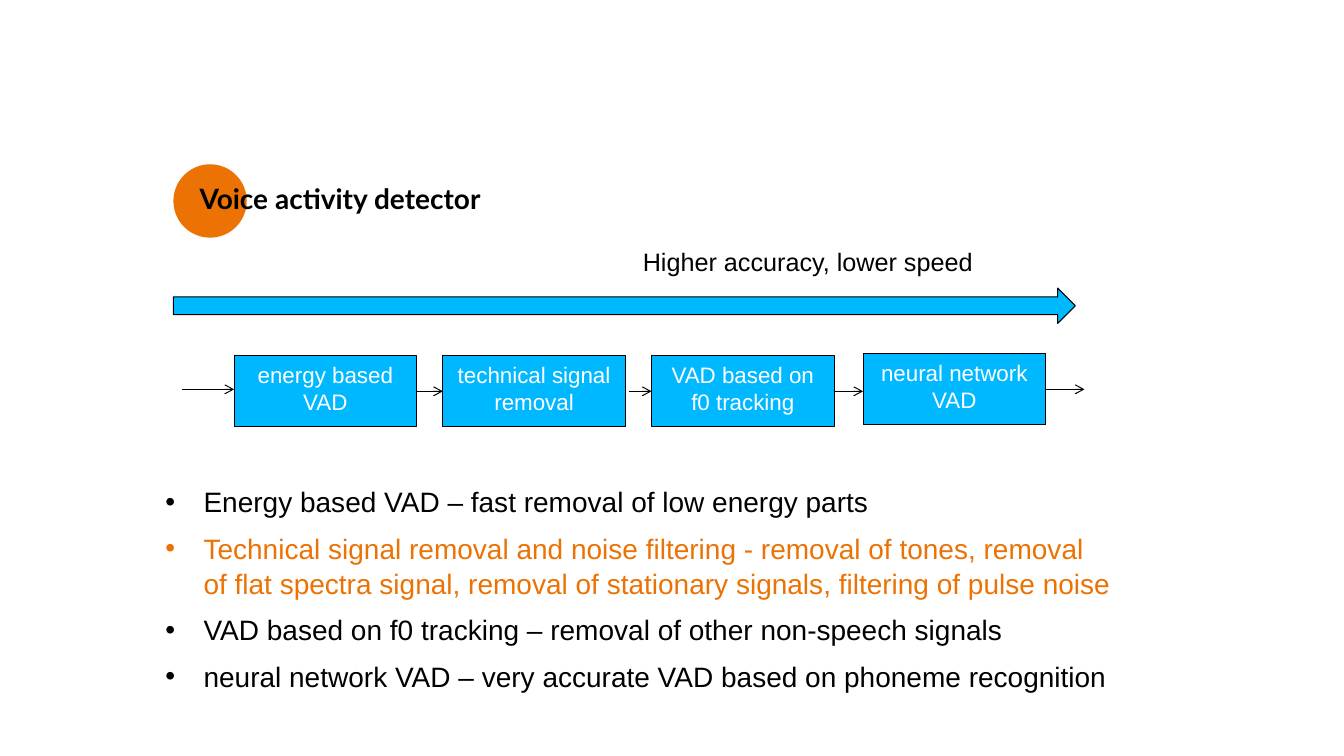
from lxml import etree
from pptx import Presentation, util as u
from pptx.dml.color import RGBColor
from pptx.enum import shapes, text
from pptx.oxml.ns import qn

BLACK, WHITE, BLUE, ORANGE = "000000", "FFFFFF", "00B8FF", "EC7204"
Cm = u.Cm


def rgb(value):
    return RGBColor.from_string(value)


def add_bullet(p, indent):
    pPr = p._p.get_or_add_pPr()
    pPr.set("marL", str(Cm(indent)))
    pPr.set("indent", str(-Cm(indent)))
    etree.SubElement(pPr, qn("a:buFont")).set("typeface", "Arial")
    etree.SubElement(pPr, qn("a:buChar")).set("char", "•")


def put_text(tf, content, size, color=BLACK, font="Arial", bold=False, align=None,
             first=True, indent=None, before=None, spacing=None):
    p = tf.paragraphs[0] if first else tf.add_paragraph()
    if align is not None:
        p.alignment = align
    if spacing:
        p.line_spacing = spacing
    if before and not first:
        p.space_before = u.Pt(before)
    if indent:
        add_bullet(p, indent)
    r = p.add_run()
    r.text = content
    r.font.size, r.font.name, r.font.bold = u.Pt(size), font, bold
    r.font.color.rgb = rgb(color)


def add_box(s, kind, x, y, w, h, fill, outlined=False):
    sp = s.shapes.add_shape(kind, Cm(x), Cm(y), Cm(w), Cm(h))
    sp.shadow.inherit = False
    sp.fill.solid()
    sp.fill.fore_color.rgb = rgb(fill)
    if outlined:
        sp.line.color.rgb, sp.line.width = rgb(BLACK), u.Pt(0.75)
    else:
        sp.line.fill.background()
    tf = sp.text_frame
    tf.word_wrap, tf.vertical_anchor = True, text.MSO_ANCHOR.TOP
    return sp


def add_label(s, x, y, w, h):
    tf = s.shapes.add_textbox(Cm(x), Cm(y), Cm(w), Cm(h)).text_frame
    tf.word_wrap = True
    return tf


def add_arrow(s, x1, x2, y, source=None, target=None):
    cxn = s.shapes.add_connector(shapes.MSO_CONNECTOR.STRAIGHT, Cm(x1), Cm(y), Cm(x2), Cm(y))
    if source is not None:
        cxn.begin_connect(source, 3)
    if target is not None:
        cxn.end_connect(target, 1)
    cxn.line.color.rgb, cxn.line.width = rgb(BLACK), u.Pt(0.75)
    etree.SubElement(cxn.line._get_or_add_ln(), qn("a:tailEnd")).set("type", "arrow")
    etree.SubElement(cxn._element.spPr, qn("a:effectLst"))


def add_title(s, x, y, w, h):
    add_box(s, shapes.MSO_SHAPE.OVAL, x, y, h, h, ORANGE)
    tf = add_label(s, x + 0.41, y + 0.41, w - 0.41, 1.02)
    tf.vertical_anchor = text.MSO_ANCHOR.MIDDLE
    put_text(tf, "Voice activity detector", 20, font="Lato", bold=True, spacing=0.9)


def add_trend(s, x, y, w, h):
    put_text(add_label(s, x + 11.58, y, 10.13, 1.14), "Higher accuracy, lower speed", 18)
    add_box(s, shapes.MSO_SHAPE.RIGHT_ARROW, x, y + h - 0.89, w, 0.89, BLUE, outlined=True)


def add_pipeline(s, x, y, w, h):
    stage_w, step, lead = 4.6, 5.26, 1.3
    stages = [["energy based VAD"], ["technical signal removal"],
              ["VAD based on", "f0 tracking"], ["neural network VAD"]]
    lefts = [x + lead + i * step for i in range(3)] + [x + w - 0.98 - stage_w]
    tops = [y + 0.05] * 3 + [y]
    boxes = []
    for lines, left, top in zip(stages, lefts, tops):
        sp = add_box(s, shapes.MSO_SHAPE.RECTANGLE, left, top, stage_w, h, BLUE, outlined=True)
        for i, line in enumerate(lines):
            put_text(sp.text_frame, line, 16, WHITE, align=text.PP_ALIGN.CENTER, first=i == 0)
        boxes.append(sp)
    rights = [left + stage_w for left in lefts]
    middle = y + h / 2
    add_arrow(s, x, lefts[0], middle)
    add_arrow(s, rights[0], lefts[1], middle, boxes[0], boxes[1])
    add_arrow(s, rights[1] + 0.1, lefts[2], middle + 0.05, target=boxes[2])
    add_arrow(s, rights[2], lefts[3], middle + 0.05, source=boxes[2])
    add_arrow(s, rights[3], x + w, middle, source=boxes[3])


def add_notes_list(s, x, y, w, h):
    items = [
        ("Energy based VAD – fast removal of low energy parts", BLACK),
        ("Technical signal removal and noise filtering - removal of tones, removal of "
         "flat spectra signal, removal of stationary signals, filtering of pulse noise", ORANGE),
        ("VAD based on f0 tracking – removal of other non-speech signals", BLACK),
        ("neural network VAD – very accurate VAD based on phoneme recognition", BLACK),
    ]
    tf = add_box(s, shapes.MSO_SHAPE.RECTANGLE, x, y, w, h, WHITE).text_frame
    tf.margin_left = tf.margin_right = Cm(0.36)
    tf.margin_top = tf.margin_bottom = Cm(0.23)
    for i, (content, color) in enumerate(items):
        put_text(tf, content, 20, color, align=text.PP_ALIGN.LEFT, first=i == 0,
                 indent=0.96, before=8, spacing=1.05)


def main():
    prs = Presentation()
    prs.slide_width, prs.slide_height = Cm(33.87), Cm(19.05)
    s = prs.slides.add_slide(prs.slide_layouts[6])
    add_title(s, 4.37, 4.14, 14.4, 1.85)
    add_pipeline(s, 4.6, 8.92, 22.73, 1.78)
    add_trend(s, 4.37, 6.07, 22.73, 2.08)
    add_notes_list(s, 3.81, 11.94, 24.66, 6.45)
    prs.save("out.pptx")


if __name__ == "__main__":
    main()
